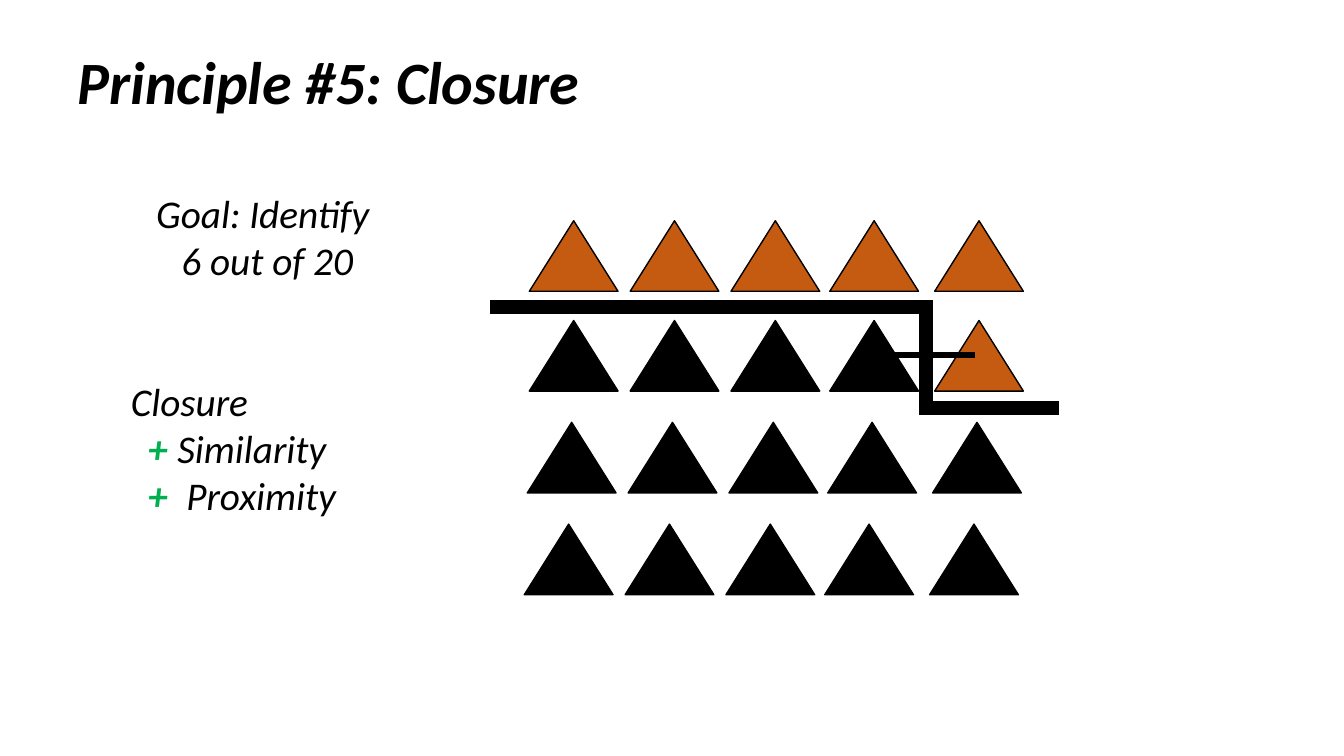
from pptx import Presentation
from pptx import util as u
from pptx.dml.color import RGBColor
from pptx.enum import shapes, text
from pptx.oxml.ns import qn
from lxml import etree

BLACK, ORANGE, GREEN = "000000", "C55A11", "00B050"


def color(hex_code):
    return RGBColor.from_string(hex_code)


def style(paragraph, size, bold=False):
    font = paragraph.font
    font.name, font.size = "Calibri", u.Pt(size)
    font.bold, font.italic = bold, True
    font.color.rgb = color(BLACK)


prs = Presentation()
prs.slide_width, prs.slide_height = u.Inches(13.33), u.Inches(7.5)
slide = prs.slides.add_slide(prs.slide_layouts[6])

# Title
title = slide.shapes.add_textbox(
    u.Inches(0.67), u.Inches(0.21), u.Inches(9.09), u.Inches(1)).text_frame
title.word_wrap = True
title.vertical_anchor = text.MSO_ANCHOR.BOTTOM
title.text = "Principle #5: Closure"
title.paragraphs[0].line_spacing = 0.9
style(title.paragraphs[0], 42.9, bold=True)

# Four rows of five triangles; the number of orange ones varies by row
column_offsets = [0, 1, 2, 2.98, 4.02]
rows = [(5.25, 2.19, range(5)), (5.25, 3.18, [4]), (5.23, 4.19, []), (5.2, 5.2, [])]
for left, top, orange_columns in rows:
    row = slide.shapes.add_group_shape()
    for column, offset in enumerate(column_offsets):
        triangle = row.shapes.add_shape(
            shapes.MSO_SHAPE.ISOSCELES_TRIANGLE,
            u.Inches(left + offset), u.Inches(top), u.Inches(0.88), u.Inches(0.7))
        triangle.shadow.inherit = False
        triangle.fill.solid()
        triangle.fill.fore_color.rgb = color(ORANGE if column in orange_columns else BLACK)
        triangle.line.color.rgb = color(BLACK)
        triangle.line.width = u.Pt(1)

# Stepped boundary around the six, and the bar that crosses it
boundary = [
    (4.86, 3.05, 9.25, 3.05, 10),
    (9.18, 2.99, 9.18, 4.06, 10),
    (9.12, 4.05, 10.5, 4.05, 10),
    (8.73, 3.52, 9.67, 3.52, 4.5),
]
for x1, y1, x2, y2, width in boundary:
    segment = slide.shapes.add_connector(
        shapes.MSO_CONNECTOR.STRAIGHT,
        u.Inches(x1), u.Inches(y1), u.Inches(x2), u.Inches(y2))
    segment.line.color.rgb = color(BLACK)
    segment.line.width = u.Pt(width)
    etree.SubElement(segment._element.spPr, qn("a:effectLst"))

# Principles that work together
principles = slide.shapes.add_textbox(
    u.Inches(1.2), u.Inches(3.69), u.Inches(3.31), u.Inches(1.51)).text_frame
principles.word_wrap = True
principles.text = "Closure"
style(principles.paragraphs[0], 28)
for name, name_indent in [("Similarity", 0.46), ("Proximity", 0.55)]:
    added = principles.add_paragraph()
    style(added, 28)
    properties = added._p.get_or_add_pPr()
    properties.set("marL", str(u.Inches(name_indent)))
    properties.set("indent", str(u.Inches(0.17 - name_indent)))
    plus = added.add_run()
    plus.text = "+"
    plus.font.bold = True
    plus.font.color.rgb = color(GREEN)
    added.add_run().text = "\t" + name

# Goal
goal = slide.shapes.add_textbox(
    u.Inches(0.57), u.Inches(1.83), u.Inches(4.16), u.Inches(1.04)).text_frame
goal.word_wrap = True
goal.text = "Goal: Identify \v6 out of 20"
goal.paragraphs[0].alignment = text.PP_ALIGN.CENTER
style(goal.paragraphs[0], 28)

prs.save("out.pptx")
